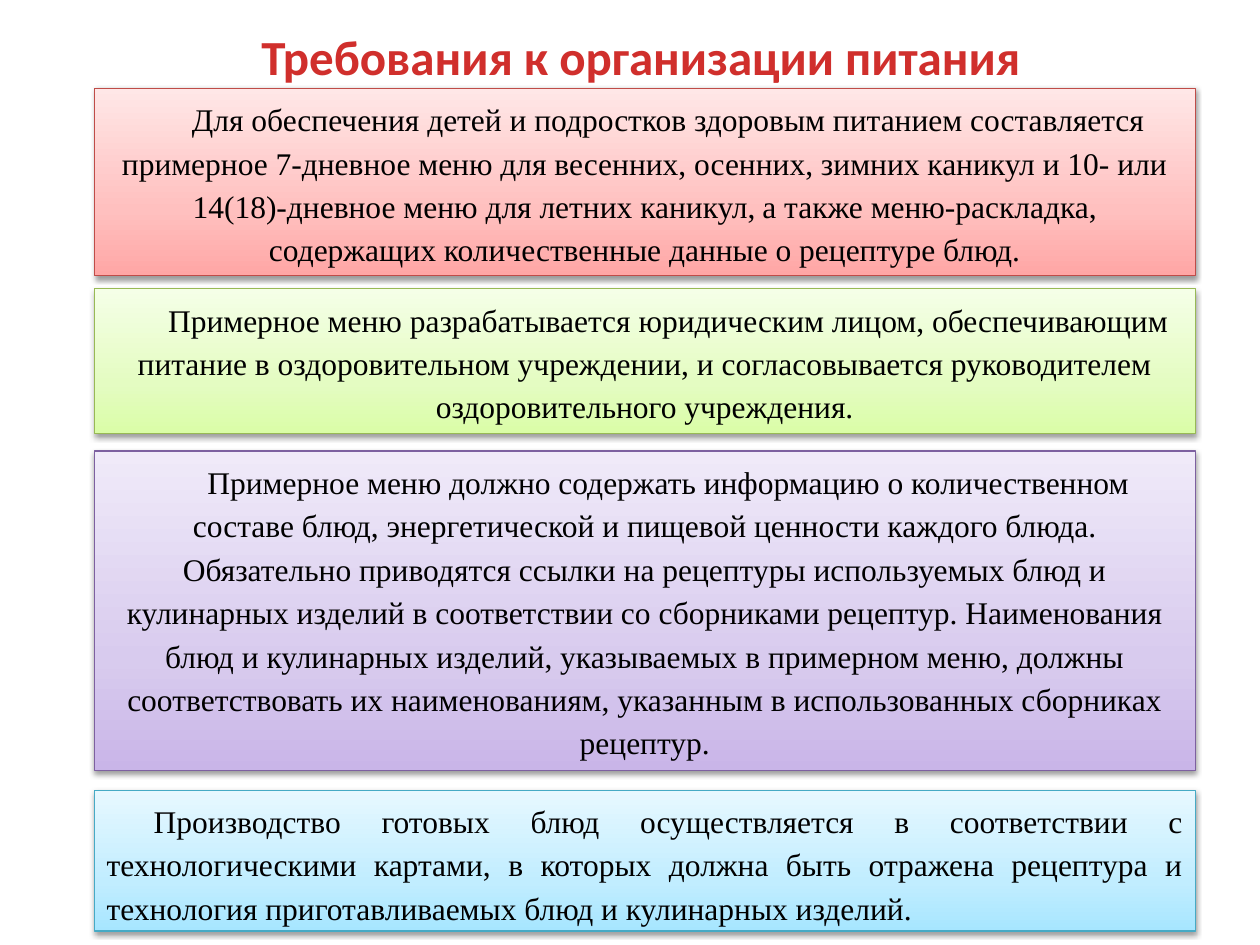
"""Builds a slide on catering requirements: a title above four shaded text panels."""
from lxml.etree import SubElement
from pptx import Presentation
from pptx.dml.color import RGBColor
from pptx.enum.shapes import MSO_SHAPE
from pptx.enum.text import MSO_ANCHOR, MSO_AUTO_SIZE, PP_ALIGN
from pptx.oxml import parse_xml
from pptx.oxml.ns import nsdecls, qn
from pptx.util import Cm, Pt

BLACK = RGBColor(0x00, 0x00, 0x00)
RED_LINE = RGBColor(0xBF, 0x4C, 0x48)
GREEN_LINE = RGBColor(0x98, 0xB9, 0x55)
PURPLE_LINE = RGBColor(0x7D, 0x60, 0xA0)
BLUE_LINE = RGBColor(0x46, 0xAA, 0xC5)
RED_SHADES = [RGBColor(0xFF, 0xA6, 0xA5), RGBColor(0xFF, 0xC0, 0xBF), RGBColor(0xFF, 0xE7, 0xE7)]
GREEN_SHADES = [RGBColor(0xDA, 0xFD, 0xA7), RGBColor(0xE4, 0xFC, 0xC2), RGBColor(0xF5, 0xFF, 0xE7)]
PURPLE_SHADES = [RGBColor(0xC9, 0xB5, 0xE8), RGBColor(0xD8, 0xCB, 0xEE), RGBColor(0xF0, 0xEA, 0xF9)]
BLUE_SHADES = [RGBColor(0xA7, 0xE6, 0xFF), RGBColor(0xC1, 0xED, 0xFF), RGBColor(0xE7, 0xF8, 0xFF)]
TITLE_SHADES = [RGBColor(0xFC, 0x7C, 0x7A), RGBColor(0xD0, 0x2F, 0x2C), RGBColor(0xC7, 0x05, 0x00)]

BODY = {"name": "Times New Roman", "size": Pt(18)}
SPACE = {"name": "Calibri", "size": Pt(16)}
HEADING = {"name": "Calibri", "size": Pt(28), "bold": True}

TITLE = "Требования к организации питания"
PANELS = [
    {"top": 1.78, "height": 3.78, "line": RED_LINE, "shades": RED_SHADES, "align": PP_ALIGN.CENTER,
     "spans": [
         ("Для обеспечения детей и подростков здоровым питанием составляется примерное "
          "7-дневное меню для весенних, осенних, зимних каникул и 10- или 14(18)-дневное "
          "меню для летних каникул,", BODY),
         (" ", SPACE),
         ("а также меню-раскладка, содержащих количественные данные о рецептуре блюд.", BODY)]},
    {"top": 5.82, "height": 2.92, "line": GREEN_LINE, "shades": GREEN_SHADES, "align": PP_ALIGN.CENTER,
     "spans": [
         ("Примерное меню разрабатывается юридическим лицом, обеспечивающим питание в "
          "оздоровительном учреждении, и согласовывается руководителем оздоровительного "
          "учреждения.", BODY)]},
    {"top": 9.09, "height": 6.45, "line": PURPLE_LINE, "shades": PURPLE_SHADES, "align": PP_ALIGN.CENTER,
     "spans": [
         ("Примерное меню должно содержать информацию о количественном составе блюд, "
          "энергетической и пищевой ценности каждого блюда. Обязательно приводятся ссылки "
          "на рецептуры используемых блюд и кулинарных изделий в соответствии со сборниками "
          "рецептур. Наименования блюд и кулинарных изделий, указываемых в примерном меню, "
          "должны соответствовать их наименованиям, указанным в использованных сборниках "
          "рецептур.", BODY)]},
    {"top": 15.93, "height": 2.84, "line": BLUE_LINE, "shades": BLUE_SHADES, "align": PP_ALIGN.JUSTIFY,
     "spans": [
         ("Производство готовых блюд осуществляется в соответствии с технологическими "
          "картами, в которых должна быть отражена рецептура и технология приготавливаемых "
          "блюд и кулинарных изделий.", BODY)]},
]


def set_values(target, values):
    for name, value in values.items():
        setattr(target, name, value)


def gradient(shades, middle, degrees):
    stops = "".join(
        f'<a:gs pos="{percent * 1000}"><a:srgbClr val="{shade}"/></a:gs>'
        for percent, shade in zip((0, middle, 100), shades))
    return parse_xml(
        f'<a:gradFill {nsdecls("a")} rotWithShape="1"><a:gsLst>{stops}</a:gsLst>'
        f'<a:lin ang="{degrees * 60000}" scaled="0"/></a:gradFill>')


def add_shadow(box):
    box.shadow.inherit = False
    effects = box._element.spPr.find(qn("a:effectLst"))
    shadow = SubElement(effects, qn("a:outerShdw"), blurRad=str(Pt(3.1)), dist=str(Pt(1.6)),
                        dir=str(90 * 60000), rotWithShape="0")
    color = SubElement(shadow, qn("a:srgbClr"), val=str(BLACK))
    SubElement(color, qn("a:alpha"), val="38000")


def add_span(para, text, font):
    span = para.add_run()
    span.text = text
    set_values(span.font, font)
    return span


def prepare_frame(box):
    set_values(box.text_frame, {"word_wrap": True, "vertical_anchor": MSO_ANCHOR.TOP,
                                "auto_size": MSO_AUTO_SIZE.SHAPE_TO_FIT_TEXT})
    return box.text_frame.paragraphs[0]


def add_panel(page, panel):
    box = page.shapes.add_shape(MSO_SHAPE.RECTANGLE, Cm(1.9), Cm(panel["top"]),
                                Cm(22.2), Cm(panel["height"]))
    box._element.spPr.insert(2, gradient(panel["shades"], 35, 270))
    box.line.color.rgb = panel["line"]
    box.line.width = Pt(0.75)
    add_shadow(box)
    para = prepare_frame(box)
    set_values(para, {"alignment": panel["align"], "line_spacing": 1.15})
    para._p.get_or_add_pPr().set("indent", str(Cm(0.95)))
    for text, font in panel["spans"]:
        add_span(para, text, font).font.color.rgb = BLACK


def add_title(page):
    box = page.shapes.add_textbox(Cm(2.59), Cm(0.41), Cm(20.65), Cm(1.45))
    para = prepare_frame(box)
    para.alignment = PP_ALIGN.CENTER
    span = add_span(para, TITLE, HEADING)
    span._r.get_or_add_rPr().insert(0, gradient(TITLE_SHADES, 75, 90))


def main():
    deck = Presentation()
    set_values(deck, {"slide_width": Cm(25.4), "slide_height": Cm(19.05)})
    page = deck.slides.add_slide(deck.slide_layouts[6])
    for panel in PANELS:
        add_panel(page, panel)
    add_title(page)
    deck.save("out.pptx")


if __name__ == "__main__":
    main()
